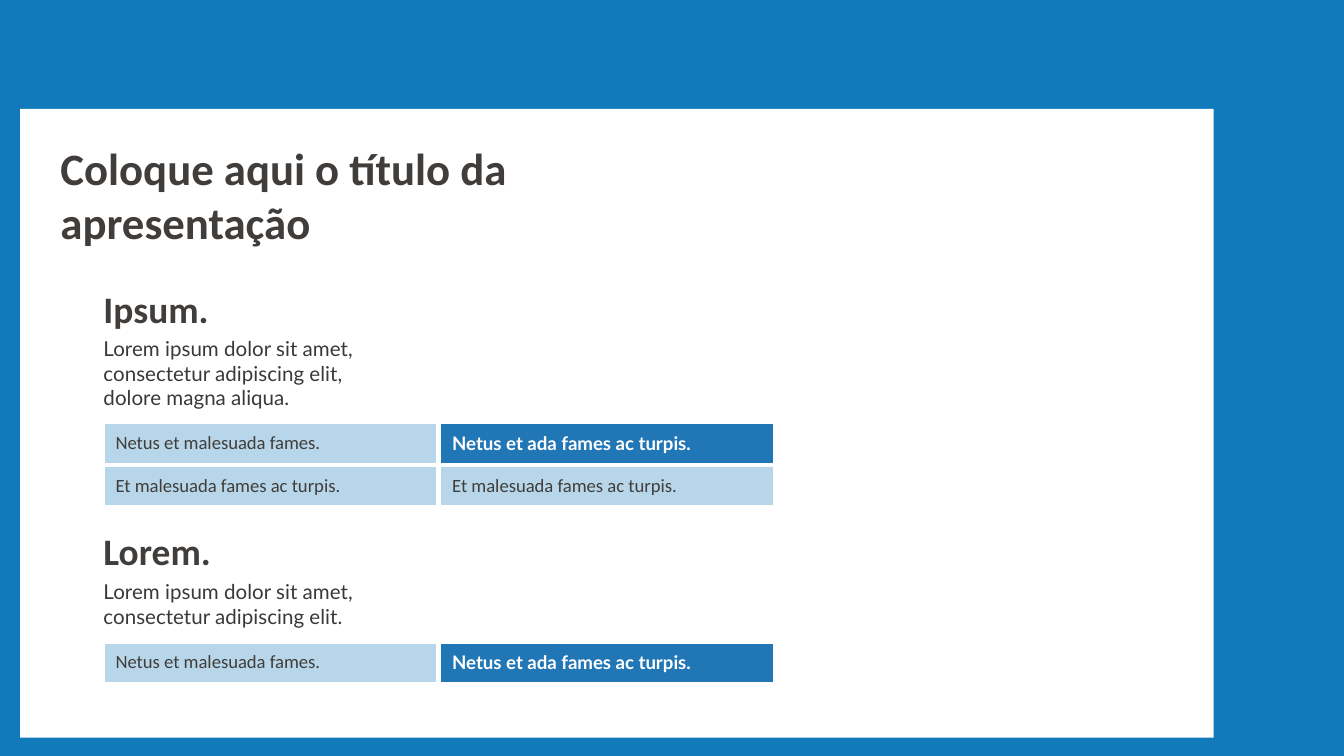
from dataclasses import dataclass

from lxml import etree
from pptx import Presentation
from pptx.dml.color import RGBColor
from pptx.enum.shapes import MSO_SHAPE
from pptx.enum.text import MSO_ANCHOR
from pptx.oxml.ns import qn
from pptx.slide import Slide
from pptx.table import _Cell
from pptx.text.text import TextFrame
from pptx.util import Inches, Pt

RECTANGLE = MSO_SHAPE.RECTANGLE
TOP = MSO_ANCHOR.TOP
MIDDLE = MSO_ANCHOR.MIDDLE


@dataclass(frozen=True)
class Theme:
    frame: str = "117ABA"
    white: str = "FFFFFF"
    ink: str = "403D3B"
    body_ink: str = "393939"
    pale: str = "B8D6E9"
    accent: str = "2176B6"
    heading_font: str = "Calibri"
    body_font: str = "Lato"
    title_size: float = 24
    heading_size: float = 20
    body_size: float = 11
    cell_size: float = 10
    border_width: float = 3


@dataclass(frozen=True)
class Section:
    heading: str
    body: str
    rows: list[list[str]]
    heading_top: float
    body_top: float
    body_height: float
    table_top: float


THEME = Theme()
HEADER_ROW = ["Netus et malesuada fames.", "Netus et ada fames ac turpis."]
SECTIONS = [
    Section(
        "Ipsum.",
        "Lorem ipsum dolor sit amet, consectetur adipiscing elit, dolore magna aliqua.",
        [HEADER_ROW, ["Et malesuada fames ac turpis."] * 2],
        2.13, 2.5, 0.64, 3.14,
    ),
    Section(
        "Lorem.",
        "Lorem ipsum dolor sit amet, consectetur adipiscing elit.",
        [HEADER_ROW],
        3.93, 4.31, 0.36, 4.77,
    ),
]
SLIDE_WIDTH = 10
SLIDE_HEIGHT = SLIDE_WIDTH * 9 / 16
TEXT_LEFT = 0.77
TABLE_LEFT = 0.76
TABLE_WIDTH = 5.01
ROW_HEIGHT = 0.32


def write_text(frame: TextFrame, text: str, *, size: float, font: str = THEME.heading_font,
               color: str = THEME.ink, bold: bool = False, space_after: float = 0) -> None:
    para = frame.paragraphs[0]
    para.space_after = Pt(space_after)
    span = para.add_run()
    span.text = text
    span.font.size = Pt(size)
    span.font.name = font
    span.font.bold = bold
    span.font.color.rgb = RGBColor.from_string(color)


def add_panel(page: Slide, left: float, top: float, width: float, height: float,
              color: str) -> None:
    panel = page.shapes.add_shape(
        RECTANGLE, Inches(left), Inches(top), Inches(width), Inches(height))
    panel.shadow.inherit = False
    panel.fill.solid()
    panel.fill.fore_color.rgb = RGBColor.from_string(color)
    panel.line.fill.background()


def add_text_box(page: Slide, left: float, top: float, width: float,
                 height: float) -> TextFrame:
    box = page.shapes.add_textbox(
        Inches(left), Inches(top), Inches(width), Inches(height))
    frame = box.text_frame
    frame.word_wrap = True
    frame.vertical_anchor = TOP
    frame.margin_left = frame.margin_top = frame.margin_right = frame.margin_bottom = 0
    return frame


def style_cell(cell: _Cell, fill: str) -> None:
    properties = cell._tc.get_or_add_tcPr()
    for side in ("a:lnL", "a:lnR", "a:lnT", "a:lnB"):
        border = etree.SubElement(properties, qn(side), w=str(Pt(THEME.border_width)))
        solid = etree.SubElement(border, qn("a:solidFill"))
        etree.SubElement(solid, qn("a:srgbClr"), val=THEME.white)
    cell.fill.solid()
    cell.fill.fore_color.rgb = RGBColor.from_string(fill)
    cell.vertical_anchor = MIDDLE


def add_cell_table(page: Slide, top: float, rows: list[list[str]]) -> None:
    table = page.shapes.add_table(
        len(rows), len(rows[0]), Inches(TABLE_LEFT), Inches(top),
        Inches(TABLE_WIDTH), Inches(ROW_HEIGHT * len(rows))).table
    table.first_row = table.horz_banding = False
    for row_index, row in enumerate(rows):
        for column_index, text in enumerate(row):
            cell = table.cell(row_index, column_index)
            highlighted = row_index == 0 and column_index == 1
            style_cell(cell, THEME.accent if highlighted else THEME.pale)
            write_text(
                cell.text_frame, text, size=THEME.cell_size, bold=highlighted,
                font=THEME.body_font if highlighted else THEME.heading_font,
                color=THEME.white if highlighted else THEME.ink)


def add_section(page: Slide, section: Section) -> None:
    body = add_text_box(page, TEXT_LEFT, section.body_top, 2.08, section.body_height)
    write_text(body, section.body, size=THEME.body_size, font=THEME.body_font,
               color=THEME.body_ink, space_after=8)
    heading = add_text_box(page, TEXT_LEFT, section.heading_top, 1.32, 0.34)
    write_text(heading, section.heading, size=THEME.heading_size, bold=True)
    add_cell_table(page, section.table_top, section.rows)


def main() -> None:
    """Build the title slide with its two text and table sections."""
    deck = Presentation()
    deck.slide_width = Inches(SLIDE_WIDTH)
    deck.slide_height = Inches(SLIDE_HEIGHT)
    page = deck.slides.add_slide(deck.slide_layouts[6])
    add_panel(page, 0, 0, SLIDE_WIDTH, SLIDE_HEIGHT, THEME.frame)
    add_panel(page, 0.15, 0.81, 8.88, 4.68, THEME.white)
    for section in SECTIONS:
        add_section(page, section)
    title = add_text_box(page, 0.45, 1.05, 3.4, 0.83)
    write_text(title, "Coloque aqui o título da apresentação",
               size=THEME.title_size, bold=True)
    deck.save("out.pptx")


if __name__ == "__main__":
    main()
